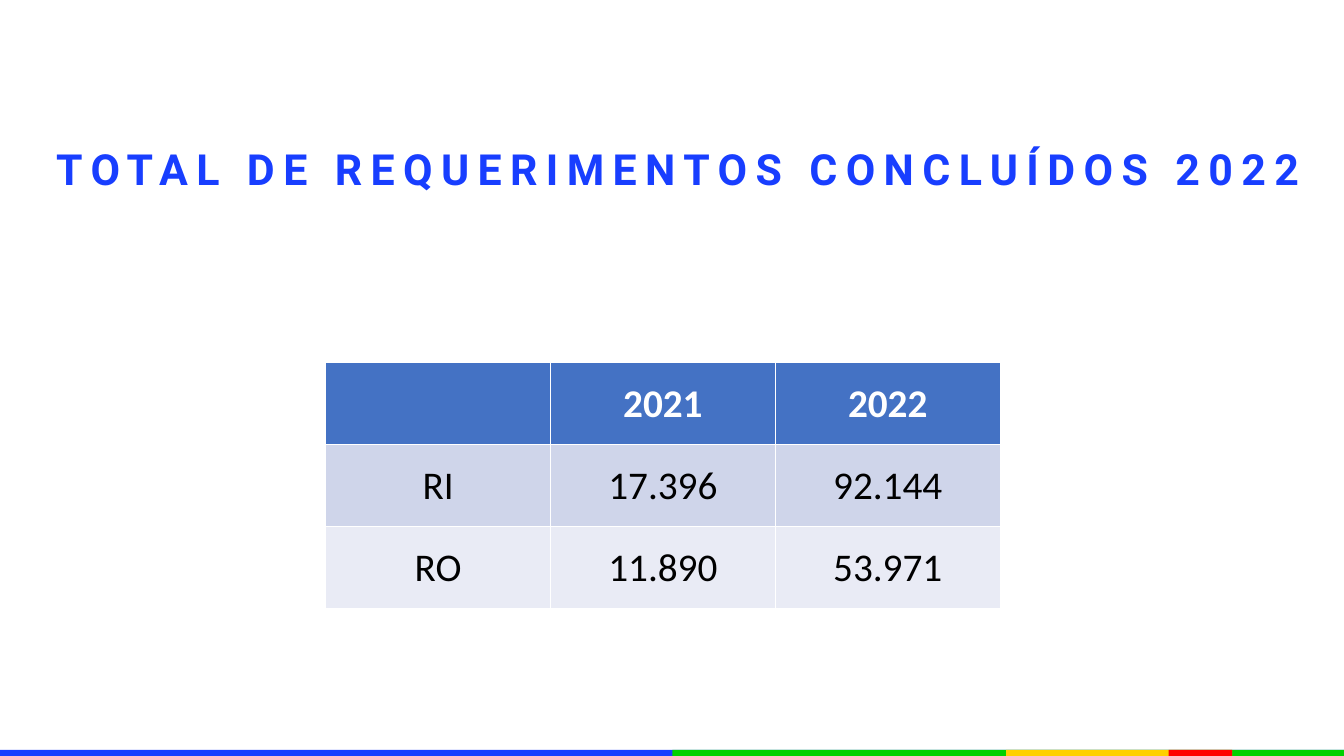
"""Build the slide with the total of completed requests by year."""
from pptx import Presentation
from pptx import util as u
from pptx.dml.color import RGBColor
from pptx.enum import shapes, text

COLORS = {
    "blue": "183EFF",
    "green": "00D000",
    "yellow": "FFD000",
    "red": "FF0000",
    "header": "4472C4",
    "odd_row": "CFD5EA",
    "even_row": "E9EBF5",
    "white": "FFFFFF",
    "black": "000000",
}


def add_styled_run(paragraph, content, font, size, color, bold):
    paragraph.alignment = text.PP_ALIGN.CENTER
    run = paragraph.add_run()
    run.text = content
    run.font.name = font
    run.font.size = u.Pt(size)
    run.font.bold = bold
    run.font.color.rgb = RGBColor.from_string(COLORS[color])
    return run


presentation = Presentation()
presentation.slide_width = u.Inches(13.33)
presentation.slide_height = u.Inches(7.5)
slide = presentation.slides.add_slide(presentation.slide_layouts[6])

footer_stripes = [
    ("blue", 0, 13.33),
    ("green", 6.67, 6.66),
    ("yellow", 9.98, 2.24),
    ("red", 11.59, 0.63),
]
for color, left, width in footer_stripes:
    stripe = slide.shapes.add_shape(
        shapes.MSO_SHAPE.RECTANGLE,
        u.Inches(left), u.Inches(7.44), u.Inches(width), u.Inches(0.06))
    stripe.shadow.inherit = False
    stripe.fill.solid()
    stripe.fill.fore_color.rgb = RGBColor.from_string(COLORS[color])
    stripe.line.fill.background()

title = slide.shapes.add_textbox(
    u.Inches(0.35), u.Inches(1.22), u.Inches(12.75), u.Inches(0.96))
title_frame = title.text_frame
title_frame.word_wrap = True
title_frame.margin_left = title_frame.margin_right = 0
title_frame.vertical_anchor = text.MSO_ANCHOR.MIDDLE
title_paragraph = title_frame.paragraphs[0]
title_paragraph.line_spacing = 0.9
title_run = add_styled_run(
    title_paragraph, "TOTAL DE REQUERIMENTOS CONCLUÍDOS 2022",
    "Roboto", 30.6, "blue", True)
title_run.font._element.set("spc", "600")

rows = [
    ("header", "white", ["", "2021", "2022"]),
    ("odd_row", "black", ["RI", "17.396", "92.144"]),
    ("even_row", "black", ["RO", "11.890", "53.971"]),
]
table = slide.shapes.add_table(
    3, 3, u.Inches(3.23), u.Inches(3.6), u.Inches(6.69), u.Inches(2.44)).table
for row_index, (fill, color, values) in enumerate(rows):
    for column_index, value in enumerate(values):
        cell = table.cell(row_index, column_index)
        cell.fill.solid()
        cell.fill.fore_color.rgb = RGBColor.from_string(COLORS[fill])
        cell.vertical_anchor = text.MSO_ANCHOR.MIDDLE
        if value:
            add_styled_run(cell.text_frame.paragraphs[0], value,
                           "Calibri", 28, color, row_index == 0)

presentation.save("out.pptx")
